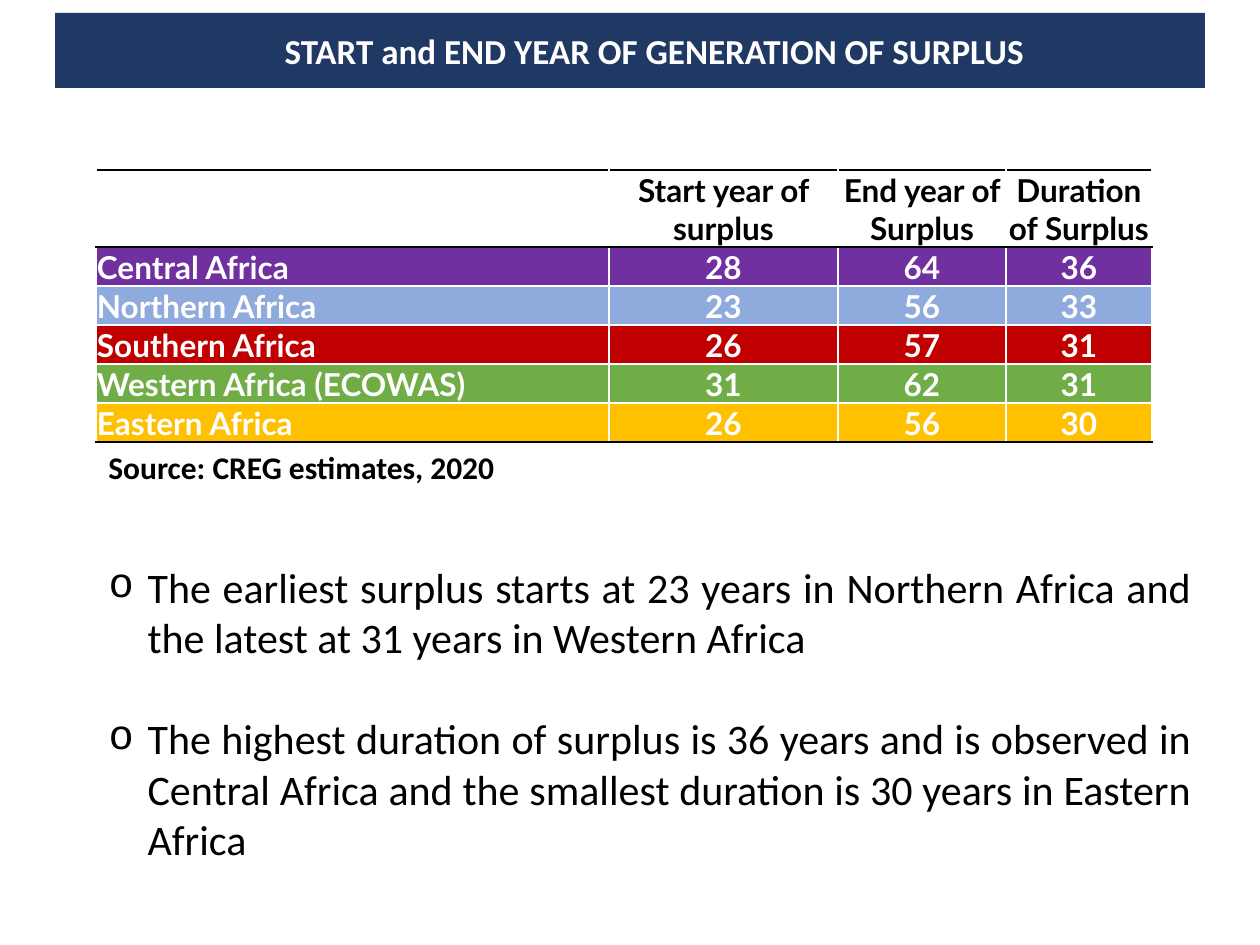
from lxml import etree
from pptx import Presentation
from pptx import util as u
from pptx.dml.color import RGBColor
from pptx.enum import text
from pptx.oxml.ns import qn

C = {"navy": "203864", "white": "FFFFFF", "black": "000000", "purple": "7030A0",
     "blue": "8FAADC", "red": "C00000", "green": "70AD47", "gold": "FFC000"}
SCALE = 914400 / 126
AL = text.PP_ALIGN


def px(n):
    return u.Emu(round(n * SCALE))


def style(p, color, align, name="Calibri", size=18, bold=True):
    p.alignment = align
    for key, value in {"name": name, "size": u.Pt(size), "bold": bold}.items():
        setattr(p.font, key, value)
    p.font.color.rgb = RGBColor.from_string(C[color])


prs = Presentation()
prs.slide_width, prs.slide_height = px(1260), px(945)
s = prs.slides.add_slide(prs.slide_layouts[1])
title, body = s.shapes.title, s.placeholders[1]
source = s.shapes.add_textbox(0, 0, 0, 0)

# Placement and text frames
boxes = [(title, (55, 13, 1150, 75), text.MSO_ANCHOR.MIDDLE),
         (source, (96, 442, 444, 50), text.MSO_ANCHOR.TOP),
         (body, (96, 555, 1108, 317), text.MSO_ANCHOR.TOP)]
for sp, place, anchor in boxes:
    for key, n in zip(("left", "top", "width", "height"), place):
        setattr(sp, key, px(n))
    frame = {"word_wrap": True, "auto_size": text.MSO_AUTO_SIZE.NONE, "vertical_anchor": anchor}
    for key, value in frame.items():
        setattr(sp.text_frame, key, value)

# Title banner
geom = etree.SubElement(title.element.spPr, qn("a:prstGeom"), prst="roundRect")
etree.SubElement(geom, qn("a:avLst"))
title.fill.solid()
title.fill.fore_color.rgb = RGBColor.from_string(C["navy"])
p = title.text_frame.paragraphs[0]
p.text = "START and END YEAR OF GENERATION OF SURPLUS"
p._p.get_or_add_pPr().set("marL", str(px(49)))
style(p, "white", AL.CENTER, size=20)

# Source line
source.fill.solid()
source.fill.fore_color.rgb = RGBColor.from_string(C["white"])
p = source.text_frame.paragraphs[0]
p.text = "Source: CREG estimates, 2020"
style(p, "black", AL.LEFT)

# Surplus table
rows = [("white", "", "Start year of surplus", "End year of Surplus", "Duration of Surplus"),
        ("purple", "Central Africa", "28", "64", "36"),
        ("blue", "Northern Africa", "23", "56", "33"),
        ("red", "Southern Africa", "26", "57", "31"),
        ("green", "Western Africa (ECOWAS)", "31", "62", "31"),
        ("gold", "Eastern Africa", "26", "56", "30")]
widths = [513, 229, 168, 146]
last = len(rows) - 1
table = s.shapes.add_table(len(rows), len(widths), px(96), px(170), px(sum(widths)), px(272)).table
for col, width in zip(table.columns, widths):
    col.width = px(width)
for i, (fill, *values) in enumerate(rows):
    table.rows[i].height = px(39 if i else 77)
    edges = {"a:lnL": "white", "a:lnR": "white",
             "a:lnT": "black" if i < 2 else "white",
             "a:lnB": "black" if i in (0, last) else "white"}
    for j, value in enumerate(values):
        cell = table.cell(i, j)
        cell.vertical_anchor = text.MSO_ANCHOR.BOTTOM
        for side, n in {"left": 1, "right": 1, "top": 1, "bottom": 0}.items():
            setattr(cell, "margin_" + side, px(n))
        tc_pr = cell._tc.get_or_add_tcPr()
        for tag, color in edges.items():
            ln = etree.SubElement(tc_pr, qn(tag), w=str(u.Pt(1)))
            etree.SubElement(etree.SubElement(ln, qn("a:solidFill")), qn("a:srgbClr"), val=C[color])
        cell.fill.solid()
        cell.fill.fore_color.rgb = RGBColor.from_string(C[fill])
        p = cell.text_frame.paragraphs[0]
        p.text = value
        style(p, "white" if i else "black", AL.CENTER if j else AL.LEFT, name="Lato")

# Findings
findings = ["The earliest surplus starts at 23 years in Northern Africa and the latest at 31 years "
            "in Western Africa",
            "The highest duration of surplus is 36 years and is observed in Central Africa and the "
            "smallest duration is 30 years in Eastern Africa"]
tf = body.text_frame
for i, finding in enumerate(findings):
    p = tf.add_paragraph() if i else tf.paragraphs[0]
    p.text = finding
    p.space_before = u.Pt(29 if i else 0)
    p_pr = p._p.get_or_add_pPr()
    p_pr.set("marL", str(px(39)))
    p_pr.set("indent", str(px(-39)))
    etree.SubElement(p_pr, qn("a:buFont"), typeface="Courier New")
    etree.SubElement(p_pr, qn("a:buChar"), char="o")
    style(p, "black", AL.JUSTIFY, size=24, bold=False)

prs.save("out.pptx")
